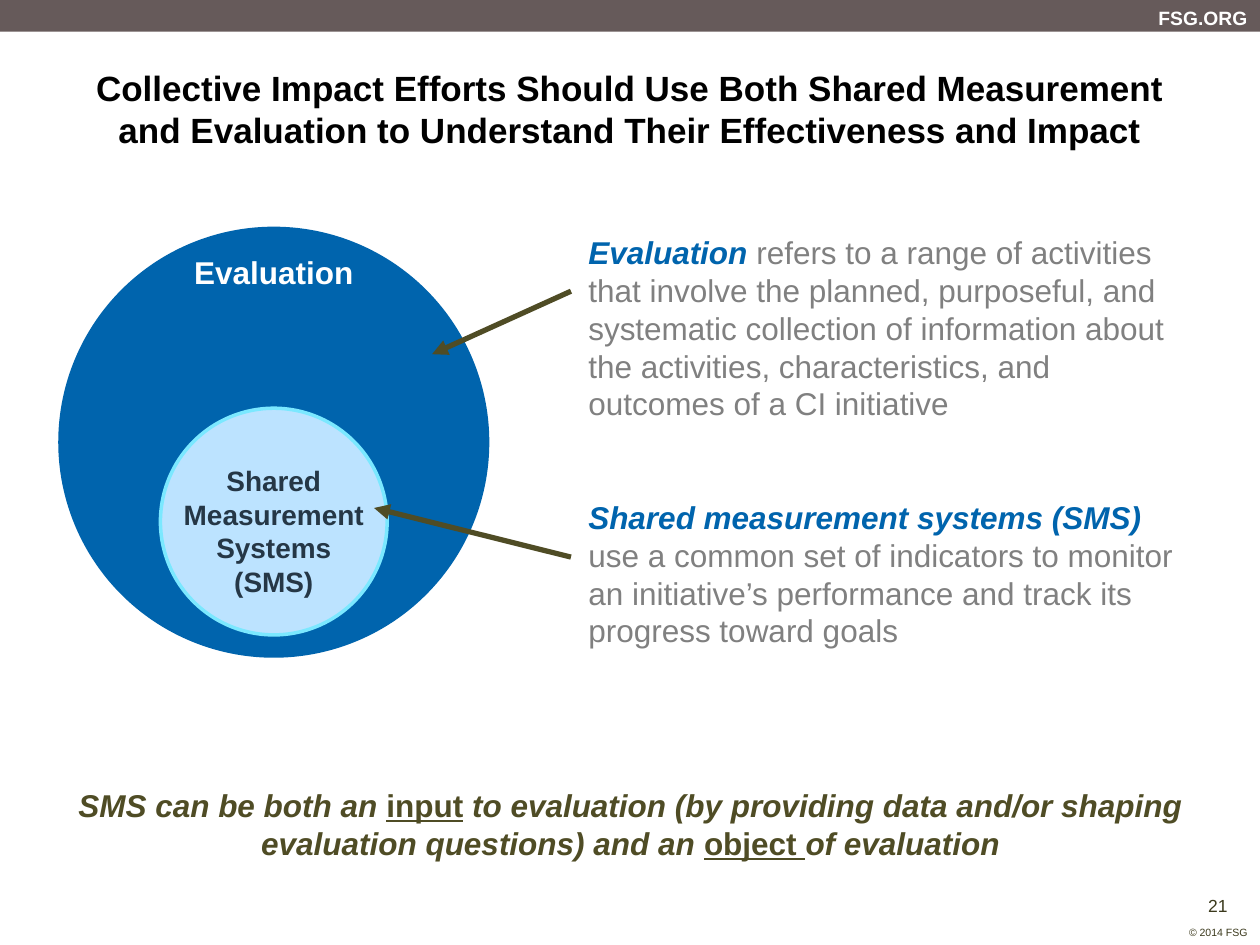
from lxml import etree
from pptx import Presentation
from pptx.dml.color import RGBColor
from pptx.enum.shapes import MSO_CONNECTOR, MSO_SHAPE
from pptx.enum.text import MSO_ANCHOR, PP_ALIGN
from pptx.oxml.ns import qn
from pptx.util import Cm, Pt

LEFT, CENTER, RIGHT = PP_ALIGN.LEFT, PP_ALIGN.CENTER, PP_ALIGN.RIGHT
TOP, MIDDLE = MSO_ANCHOR.TOP, MSO_ANCHOR.MIDDLE
RECTANGLE, OVAL = MSO_SHAPE.RECTANGLE, MSO_SHAPE.OVAL
STRAIGHT = MSO_CONNECTOR.STRAIGHT

COLORS = {
    "banner": "665A5A", "white": "FFFFFF", "black": "000000",
    "blue": "0064AD", "pale blue": "BCE3FF", "cyan": "7BE8FF",
    "navy": "253746", "olive": "4F4C25", "gray": "808080", "footer": "3B391C",
}
FONT = "Arial"
SLIDE_WIDTH, SLIDE_HEIGHT = 25.4, 19.05
CIRCLE_CENTER = 5.52

TITLE = ("Collective Impact Efforts Should Use Both Shared Measurement "
         "and Evaluation to Understand Their Effectiveness and Impact")
TITLE_BOX = (1.09, 1.27, 23.22, 1.83)

CIRCLES = [
    (4.57, 8.69, "blue", None),
    (8.23, 4.57, "pale blue", "cyan"),
]
CIRCLE_LABELS = [
    (4.98, 4.06, 1.02, ["Evaluation"], 18, "white"),
    (9.22, 4.32, 3, ["Shared Measurement", "Systems\n(SMS)"], 16, "navy"),
]
DEFINITIONS = [
    (4.57, 4.11, "Evaluation ",
     "refers to a range of activities that involve the planned, purposeful, and "
     "systematic collection of information about the activities, characteristics, "
     "and outcomes of a CI initiative"),
    (9.91, 3.33, "Shared measurement systems (SMS) ",
     "use a common set of indicators to monitor an initiative’s performance "
     "and track its progress toward goals"),
]
ARROWS = [(11.51, 5.87, 8.71, 7.14), (11.51, 11.23, 7.54, 10.24)]
TAKEAWAY = [
    ("SMS can be both an ", "bi"), ("input", "bu"), (" ", "b"),
    ("to evaluation (by providing data and/or shaping evaluation questions) "
     "and an ", "bi"),
    ("object ", "bu"), ("of evaluation", "bi"),
]
MASTER_TEXTS = [
    ((23.09, 0, 2.31, 0.74), "FSG.ORG", 11, "white", "b", RIGHT, 0.13),
    ((24.08, 17.98, 0.94, 0.53), "21", 10, "footer", "", CENTER, 0.05),
    ((23.7, 18.54, 1.7, 0.51), "© 2014 FSG", 6, "footer", "", RIGHT, 0.13),
]


def color(name):
    return RGBColor.from_string(COLORS[name])


def place(shape, box):
    shape.left, shape.top, shape.width, shape.height = map(Cm, box)


def fill_text(shape, paragraphs, size, align=CENTER, anchor=TOP,
              insets=(0.25, 0.13, 0.25, 0.13), wrap=True):
    frame = shape.text_frame
    frame.word_wrap = wrap
    frame.vertical_anchor = anchor
    (frame.margin_left, frame.margin_top,
     frame.margin_right, frame.margin_bottom) = map(Cm, insets)
    for index, runs in enumerate(paragraphs):
        paragraph = frame.add_paragraph() if index else frame.paragraphs[0]
        paragraph.alignment = align
        for text, color_name, style in runs:
            for line_number, line in enumerate(text.split("\n")):
                if line_number:
                    paragraph.add_line_break()
                run = paragraph.add_run()
                run.text = line
                run.font.name = FONT
                run.font.size = Pt(size)
                run.font.color.rgb = color(color_name)
                run.font.bold = "b" in style
                run.font.italic = "i" in style
                run.font.underline = "u" in style


def add_text(slide, box, paragraphs, size, **options):
    shape = slide.shapes.add_textbox(*map(Cm, box))
    fill_text(shape, paragraphs, size, **options)


def add_filled_shape(slide, kind, box, fill, outline=None):
    shape = slide.shapes.add_shape(kind, *map(Cm, box))
    shape.shadow.inherit = False
    shape.fill.solid()
    shape.fill.fore_color.rgb = color(fill)
    if outline:
        shape.line.color.rgb = color(outline)
        shape.line.width = Pt(2)
    else:
        shape.line.fill.background()


def add_arrow(slide, points):
    arrow = slide.shapes.add_connector(STRAIGHT, *map(Cm, points))
    arrow.line.color.rgb = color("olive")
    arrow.line.width = Pt(3)
    etree.SubElement(arrow.line._get_or_add_ln(), qn("a:tailEnd"), type="triangle")
    etree.SubElement(arrow._element.spPr, qn("a:effectLst"))


def main():
    presentation = Presentation()
    presentation.slide_width = Cm(SLIDE_WIDTH)
    presentation.slide_height = Cm(SLIDE_HEIGHT)
    slide = presentation.slides.add_slide(presentation.slide_layouts[5])

    add_filled_shape(slide, RECTANGLE, (0, 0, SLIDE_WIDTH, 0.64), "banner")
    for box, text, size, color_name, style, align, inset in MASTER_TEXTS:
        add_text(slide, box, [[(text, color_name, style)]], size, align=align,
                 anchor=MIDDLE, insets=(0.25, inset, 0.25, inset), wrap=False)

    title = slide.shapes.title
    place(title, TITLE_BOX)
    fill_text(title, [[(TITLE, "black", "b")]], 20, anchor=MIDDLE,
              insets=(0.25, 0, 0.25, 0))

    for top, diameter, fill, outline in CIRCLES:
        box = (CIRCLE_CENTER - diameter / 2, top, diameter, diameter)
        add_filled_shape(slide, OVAL, box, fill, outline)
    for top, width, height, lines, size, color_name in CIRCLE_LABELS:
        box = (CIRCLE_CENTER - width / 2, top, width, height)
        add_text(slide, box, [[(line, color_name, "b")] for line in lines], size)

    for top, height, term, meaning in DEFINITIONS:
        add_text(slide, (11.86, top, 12.07, height),
                 [[(term, "blue", "bi"), (meaning, "gray", "")]], 18,
                 align=LEFT, insets=(0, 0.13, 0.03, 0.13))
    for points in ARROWS:
        add_arrow(slide, points)

    add_text(slide, (0.66, 15.52, 24.1, 2.18),
             [[(text, "olive", style) for text, style in TAKEAWAY]], 18,
             anchor=MIDDLE, insets=(0.25, 0, 0.25, 0))

    presentation.save("out.pptx")


if __name__ == "__main__":
    main()
